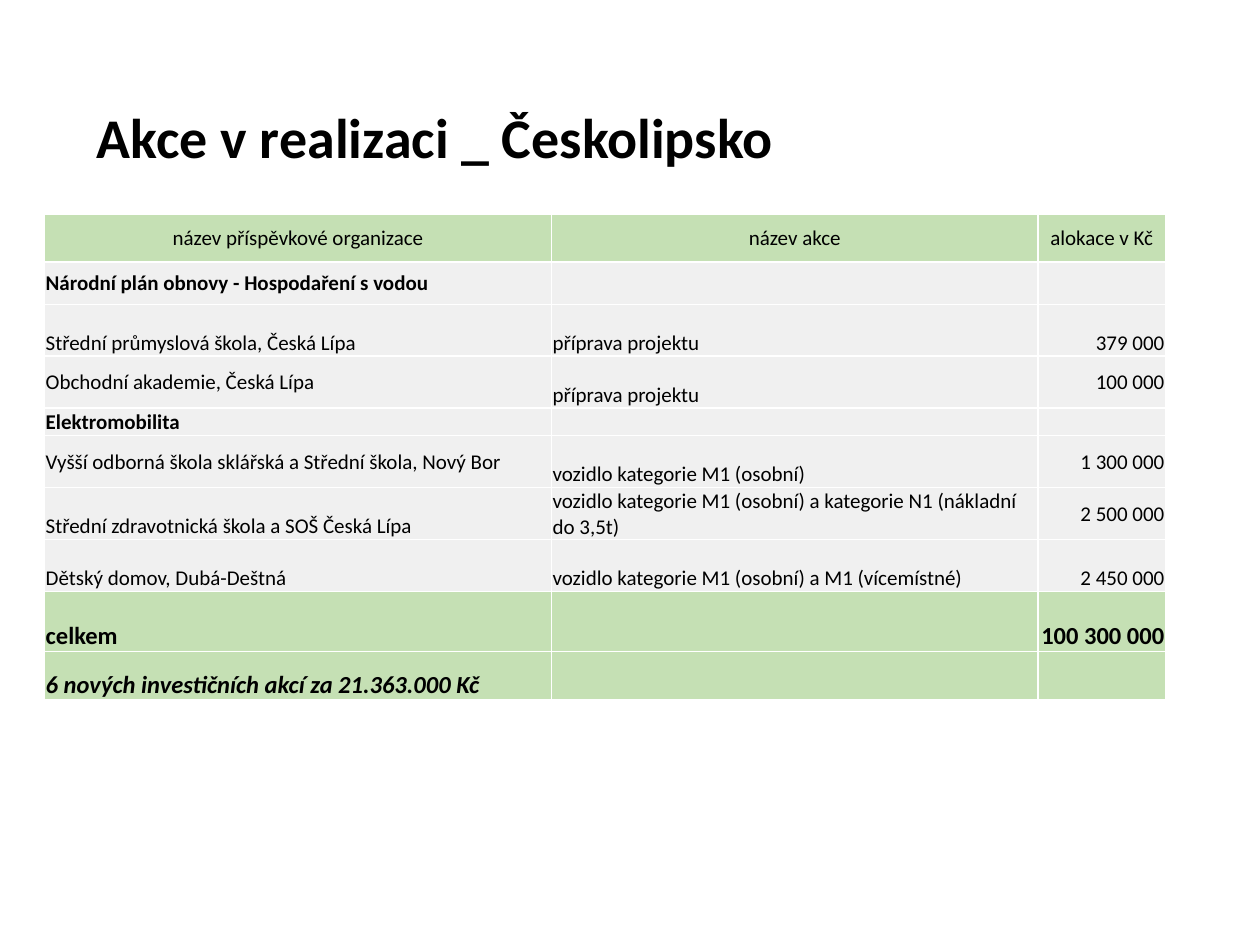
from pptx import Presentation
from pptx.dml.color import RGBColor
from pptx.enum.text import MSO_ANCHOR as Anchor, MSO_AUTO_SIZE as AutoSize, PP_ALIGN as Align
from pptx.oxml import parse_xml
from pptx.oxml.ns import nsdecls
from pptx.util import Pt

BLACK = RGBColor(0x00, 0x00, 0x00)
GREEN = RGBColor(0xC5, 0xE0, 0xB4)
GREY = RGBColor(0xF0, 0xF0, 0xF0)
BORDER_HEX = "FFFFFF"
FONT = "Calibri"


def write(frame, text, size=12, bold=False, italic=False, align=Align.LEFT):
    paragraph = frame.paragraphs[0]
    paragraph.alignment = align
    if not text:
        # Keeps an empty cell from stretching its row
        paragraph._p.get_or_add_endParaRPr().set("sz", str(size * 100))
        return
    run = paragraph.add_run()
    run.text = text
    run.font.name = FONT
    run.font.size = Pt(size)
    run.font.bold = bold
    run.font.italic = italic
    run.font.color.rgb = BLACK


def add_borders(cell):
    properties = cell._tc.get_or_add_tcPr()
    for position, side in enumerate(("lnL", "lnR", "lnT", "lnB")):
        properties.insert(position, parse_xml(
            f'<a:{side} {nsdecls("a")} w="{Pt(1)}"><a:solidFill>'
            f'<a:srgbClr val="{BORDER_HEX}"/></a:solidFill></a:{side}>'))


prs = Presentation()
prs.slide_width, prs.slide_height = Pt(720), Pt(540)
slide = prs.slides.add_slide(prs.slide_layouts[5])

title = slide.shapes.title
title.left, title.top, title.width, title.height = Pt(48.2), Pt(54.7), Pt(601), Pt(46.1)
title.text_frame.word_wrap = True
title.text_frame.auto_size = AutoSize.SHAPE_TO_FIT_TEXT
write(title.text_frame, "Akce v realizaci _ Českolipsko", size=32, bold=True)

# Each row: height, vertical anchor of each cell, fill, format, texts
header = {"align": Align.CENTER}
section = {"bold": True}
total = {"size": 14, "bold": True}
summary = {"size": 14, "bold": True, "italic": True}
rows = [
    (26.9, "mmm", GREEN, header, ("název příspěvkové organizace", "název akce", "alokace v Kč")),
    (24.3, "mmm", GREY, section, ("Národní plán obnovy - Hospodaření s vodou", "", "")),
    (29.7, "bbb", GREY, {}, ("Střední průmyslová škola, Česká Lípa", "příprava projektu", "379 000")),
    (29.7, "mbm", GREY, {}, ("Obchodní akademie, Česká Lípa", "příprava projektu", "100 000")),
    (15.7, "bbb", GREY, section, ("Elektromobilita", "", "")),
    (29.7, "mbm", GREY, {}, ("Vyšší odborná škola sklářská a Střední škola, Nový Bor",
                             "vozidlo kategorie M1 (osobní)", "1 300 000")),
    (29.7, "bbm", GREY, {}, ("Střední zdravotnická škola a SOŠ Česká Lípa",
                             "vozidlo kategorie M1 (osobní) a kategorie N1 (nákladní do 3,5t)",
                             "2 500 000")),
    (29.7, "bbb", GREY, {}, ("Dětský domov, Dubá-Deštná",
                             "vozidlo kategorie M1 (osobní) a M1 (vícemístné)", "2 450 000")),
    (34.3, "bbb", GREEN, total, ("celkem", "", "100 300 000")),
    (27.7, "bbb", GREEN, summary, ("6 nových investičních akcí za 21.363.000 Kč", "", "")),
]
column_widths = (289.7, 278, 72.8)
column_aligns = (Align.LEFT, Align.LEFT, Align.RIGHT)
anchors = {"m": Anchor.MIDDLE, "b": Anchor.BOTTOM}

projects = slide.shapes.add_table(
    len(rows), len(column_widths), Pt(25.5), Pt(122.7),
    Pt(sum(column_widths)), Pt(sum(row[0] for row in rows))).table
for column, width in zip(projects.columns, column_widths):
    column.width = Pt(width)

for r, (height, row_anchors, fill, style, texts) in enumerate(rows):
    projects.rows[r].height = Pt(height)
    for c, text in enumerate(texts):
        cell = projects.cell(r, c)
        cell.margin_left = cell.margin_right = cell.margin_top = Pt(0.6)
        cell.margin_bottom = Pt(0)
        cell.vertical_anchor = anchors[row_anchors[c]]
        cell.fill.solid()
        cell.fill.fore_color.rgb = fill
        add_borders(cell)
        write(cell.text_frame, text, **{"align": column_aligns[c], **style})

prs.save("out.pptx")
